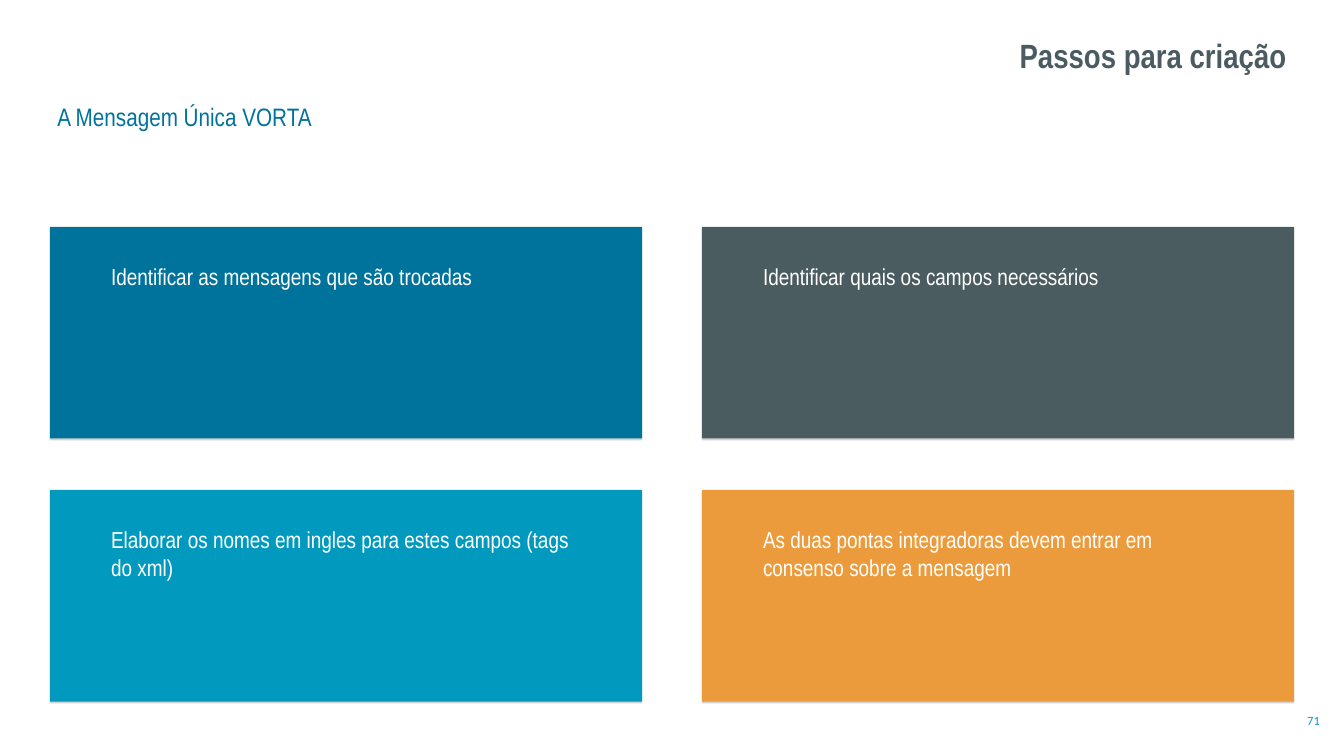
from lxml.etree import SubElement
from pptx import Presentation
from pptx.dml.color import RGBColor
from pptx.enum.shapes import MSO_SHAPE
from pptx.enum.text import MSO_ANCHOR, PP_ALIGN
from pptx.oxml.ns import qn
from pptx.util import Inches, Pt

TITLE = "Passos para criação"
SUBTITLE = "A Mensagem Única VORTA"
PAGE_NUMBER = "71"
STEPS = [  # row by row
    ("Identificar as mensagens que são trocadas", "00739C"),
    ("Identificar quais os campos necessários", "4A5C60"),
    ("Elaborar os nomes em ingles para estes campos (tags do xml)", "019ABE"),
    ("As duas pontas integradoras devem entrar em consenso sobre a mensagem", "EC9B3C"),
]

COLUMNS = 2
GRID_LEFT, GRID_TOP = 0.66, 3
CARD_WIDTH, CARD_HEIGHT = 7.83, 2.8
COLUMN_STEP, ROW_STEP = 8.62, 3.48
STEP_INDENT, STEP_DROP = 0.71, 0.42
STEP_WIDTH, STEP_HEIGHT = 6.41, 0.84


def rgb(color):
    return RGBColor.from_string(color)


def add_text(slide, text, box, size, color, font="Arial Narrow", bold=False,
             align=PP_ALIGN.LEFT, anchor=MSO_ANCHOR.TOP):
    frame = slide.shapes.add_textbox(*map(Inches, box)).text_frame
    frame.word_wrap = True
    frame.vertical_anchor = anchor
    paragraph = frame.paragraphs[0]
    paragraph.alignment = align
    run = paragraph.add_run()
    run.text = text
    run.font.name = font
    run.font.size = Pt(size)
    run.font.bold = bold
    run.font.color.rgb = rgb(color)


def add_drop_shadow(shape):
    """Put a thin grey shadow straight below the shape."""
    shape.shadow.inherit = False
    effects = shape._element.spPr.find(qn("a:effectLst"))
    shadow = SubElement(effects, qn("a:outerShdw"), blurRad="0",
                        dist=str(Pt(1.8)), dir="5400000", rotWithShape="0")
    tint = SubElement(shadow, qn("a:srgbClr"), val="808080")
    SubElement(tint, qn("a:alpha"), val="35000")


def add_card(slide, left, top, color):
    card = slide.shapes.add_shape(
        MSO_SHAPE.RECTANGLE, *map(Inches, (left, top, CARD_WIDTH, CARD_HEIGHT)))
    card.fill.solid()
    card.fill.fore_color.rgb = rgb(color)
    card.line.fill.background()
    add_drop_shadow(card)


def main():
    deck = Presentation()
    deck.slide_width, deck.slide_height = Inches(17.77), Inches(10)
    slide = deck.slides.add_slide(deck.slide_layouts[6])

    add_text(slide, TITLE, (5.61, 0.41, 11.5, 0.61), 32, "4A5C61",
             bold=True, align=PP_ALIGN.RIGHT)
    add_text(slide, SUBTITLE, (GRID_LEFT, 1.29, 4.04, 0.93), 24, "00739C")

    for index, (step, color) in enumerate(STEPS):
        row, column = divmod(index, COLUMNS)
        left = GRID_LEFT + column * COLUMN_STEP
        top = GRID_TOP + row * ROW_STEP
        add_card(slide, left, top, color)
        add_text(slide, step, (left + STEP_INDENT, top + STEP_DROP,
                               STEP_WIDTH, STEP_HEIGHT), 22, "FFFFFF")

    add_text(slide, PAGE_NUMBER, (13.4, 9.27, 4.15, 0.53), 12, "0C9AC0",
             font="Calibri", align=PP_ALIGN.RIGHT, anchor=MSO_ANCHOR.MIDDLE)
    deck.save("out.pptx")


if __name__ == "__main__":
    main()
